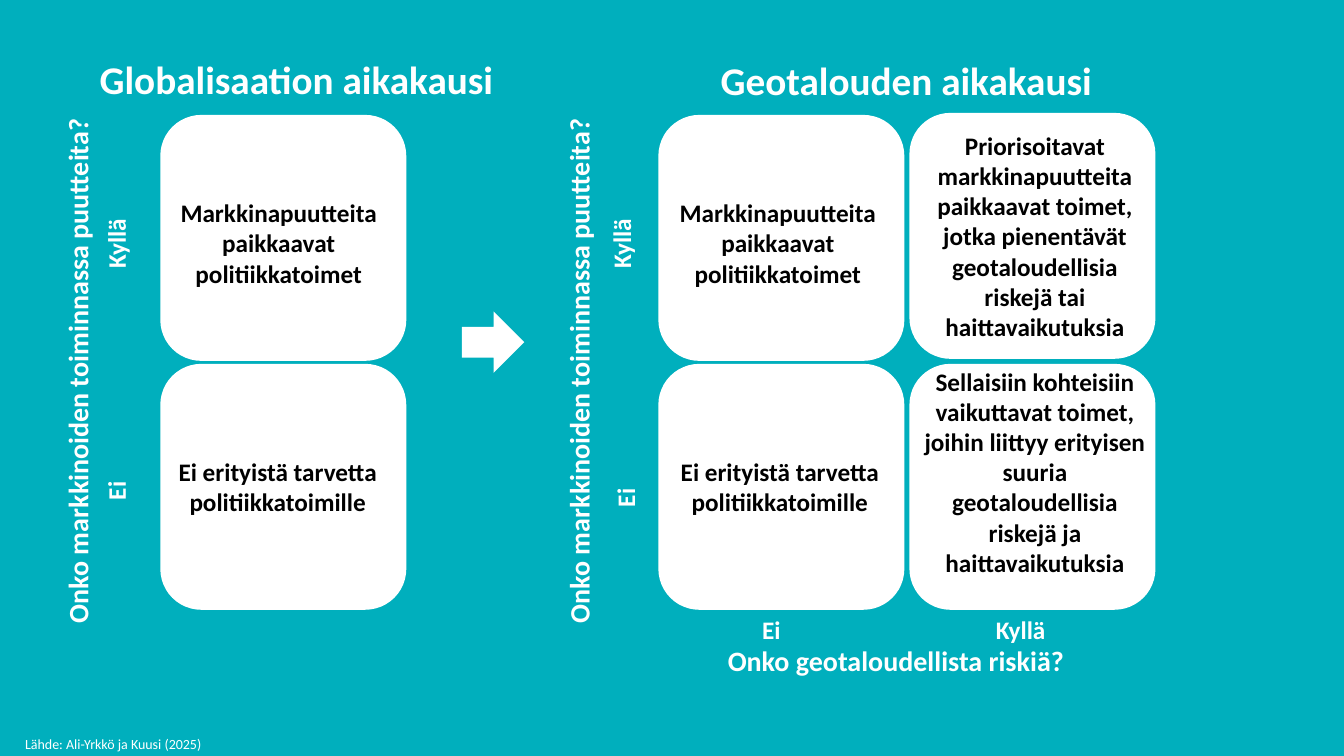
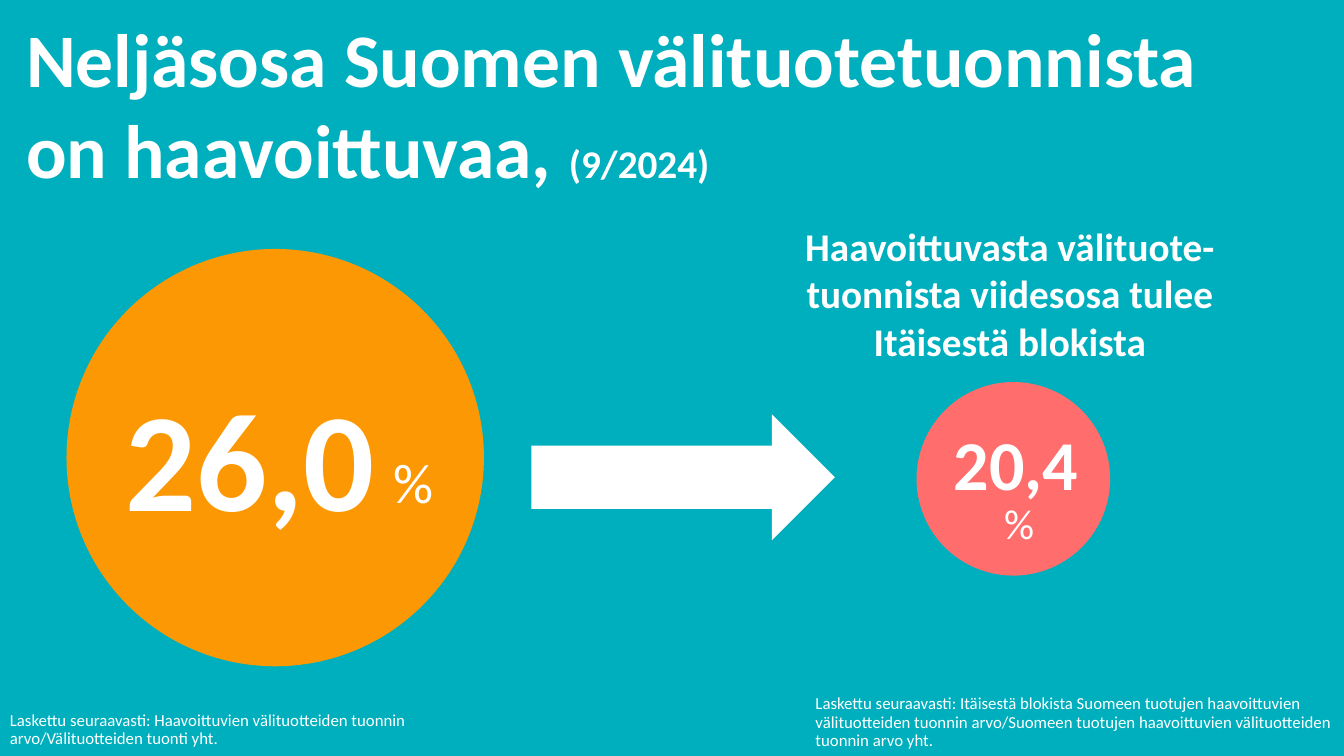
from pptx import Presentation
from pptx.dml.color import RGBColor
from pptx.enum.shapes import MSO_SHAPE
from pptx.enum.text import MSO_AUTO_SIZE, PP_ALIGN
from pptx.util import Pt

PX = 9144
WIDTH, HEIGHT = 1333, 750
FONT = "Calibri"
COLORS = {
    "background": "00AFBD",
    "white": "FFFFFF",
    "black": "000000",
    "orange": "FC9804",
    "coral": "FF6D6D",
}
ROUNDED = MSO_SHAPE.ROUNDED_RECTANGLE
ELLIPSE = MSO_SHAPE.OVAL
ARROW = MSO_SHAPE.RIGHT_ARROW
LEFT, CENTER = PP_ALIGN.LEFT, PP_ALIGN.CENTER
GROW, FIXED = MSO_AUTO_SIZE.SHAPE_TO_FIT_TEXT, MSO_AUTO_SIZE.NONE

CELL = 244
TOP_ROW, BOTTOM_ROW = 114, 361
MARKET_QUESTION = "Onko markkinoiden toiminnassa puutteita?"
MARKET_ACTIONS = "Markkinapuutteita paikkaavat politiikkatoimet"
NO_ACTIONS = "Ei erityistä tarvetta politiikkatoimille"
PRIORITY_ACTIONS = (
    "Priorisoitavat markkinapuutteita paikkaavat toimet, jotka pienentävät "
    "geotaloudellisia riskejä tai haittavaikutuksia"
)
TARGET_ACTIONS = (
    "Sellaisiin kohteisiin vaikuttavat toimet, joihin liittyy erityisen suuria "
    "geotaloudellisia riskejä ja haittavaikutuksia"
)


class Deck:
    def __init__(self):
        self.presentation = Presentation()
        self.presentation.slide_width = WIDTH * PX
        self.presentation.slide_height = HEIGHT * PX
        self.slide = None

    def color(self, name):
        return RGBColor.from_string(COLORS[name])

    def add_slide(self):
        layout = self.presentation.slide_layouts[6]
        self.slide = self.presentation.slides.add_slide(layout)
        fill = self.slide.background.fill
        fill.solid()
        fill.fore_color.rgb = self.color("background")

    def shape(self, kind, left, top, width, height, color="white"):
        shape = self.slide.shapes.add_shape(
            kind, left * PX, top * PX, width * PX, height * PX)
        shape.shadow.inherit = False
        shape.fill.solid()
        shape.fill.fore_color.rgb = self.color(color)
        shape.line.fill.background()

    def style(self, run, size, color, bold):
        run.font.name = FONT
        run.font.size = Pt(size)
        run.font.bold = bold
        run.font.color.rgb = self.color(color)

    def text(self, text, left, top, width, height, size, color="white",
             bold=True, align=LEFT, wrap=True, fit=GROW):
        shape = self.slide.shapes.add_textbox(
            left * PX, top * PX, width * PX, height * PX)
        frame = shape.text_frame
        frame.word_wrap = wrap
        frame.auto_size = fit
        frame.text = text
        paragraph = frame.paragraphs[0]
        paragraph.alignment = align
        self.style(paragraph.runs[0], size, color, bold)
        return shape

    def cell_text(self, text, left, top, width, height):
        self.text(text, left, top, width, height, 18, "black", align=CENTER)

    def label(self, text, left, top, width, height, size=18):
        return self.text(text, left, top, width, height, size, wrap=False)

    def vertical_label(self, text, left, top, height):
        shape = self.label(text, left, top, 50, height)
        shape.text_frame._txBody.bodyPr.set("vert", "vert270")

    def vertical_question(self, left):
        shape = self.text(MARKET_QUESTION, left, 346, 558, 44, 20, align=CENTER)
        shape.rotation = 270

    def figure(self, text, left, top, width, height, size, bold=True):
        shape = self.text(text, left, top, width, height, size,
                          bold=bold, fit=FIXED)
        self.space(shape, 0.9, 10, 6)

    def note(self, text, left, top, width, height):
        shape = self.text(text, left, top, width, height, 12,
                          bold=False, fit=FIXED)
        self.space(shape, 0.9, 0, 12)

    def space(self, shape, line, before=0, after=0):
        paragraph = shape.text_frame.paragraphs[0]
        paragraph.line_spacing = line
        paragraph.space_before = Pt(before)
        paragraph.space_after = Pt(after)


def build_matrix_slide(deck):
    deck.add_slide()
    for left, top_row in ((159, TOP_ROW), (653, TOP_ROW), (902, 112)):
        for top in (top_row, BOTTOM_ROW):
            deck.shape(ROUNDED, left, top, CELL, CELL)

    for left, no_left, no_top, yes_left in ((-202, 95, 477, 95),
                                            (295, 600, 484, 596)):
        deck.vertical_question(left)
        deck.vertical_label("Ei", no_left, no_top, 29)
        deck.vertical_label("Kyllä", yes_left, 216, 60)

    deck.label("Globalisaation aikakausi", 89, 50, 415, 57, 28)
    deck.label("Geotalouden aikakausi", 705, 51, 393, 57, 28)
    deck.shape(ARROW, 458, 309, 62, 61)

    for actions_left, none_left, none_width in ((150, 149, 253),
                                                (645, 649, 249)):
        deck.cell_text(MARKET_ACTIONS, actions_left, 191, 253, 101)
        deck.cell_text(NO_ACTIONS, none_left, 448, none_width, 71)
    deck.cell_text(PRIORITY_ACTIONS, 900, 124, 253, 222)
    deck.cell_text(TARGET_ACTIONS, 901, 358, 251, 222)

    deck.label("Ei", 746, 605, 38, 40)
    deck.label("Kyllä", 978, 605, 70, 40)
    risk_question = deck.label(
        "Onko geotaloudellista riskiä?", 712, 653, 356, 28, 20)
    deck.space(risk_question, Pt(10))
    deck.text("Lähde: Ali-Yrkkö ja Kuusi (2025)", 15, 725, 699, 27, 10, bold=False)


def build_share_slide(deck):
    deck.add_slide()
    title = deck.text("Neljäsosa Suomen välituotetuonnista on haavoittuvaa, ",
                      16, 7, 1223, 192, 54)
    date = title.text_frame.paragraphs[0].add_run()
    date.text = "(9/2024)"
    deck.style(date, 28, "white", True)

    deck.shape(ELLIPSE, 66, 247, 414, 414, "orange")
    deck.figure("%", 380, 447, 66, 72, 40, bold=False)
    deck.figure("26,0", 115, 383, 284, 169, 100)
    deck.note("Laskettu seuraavasti: Haavoittuvien välituotteiden tuonnin "
              "arvo/Välituotteiden tuonti yht.", 0, 701, 426, 36)

    deck.shape(ELLIPSE, 909, 379, 192, 192, "coral")
    deck.figure("%", 986, 494, 30, 33, 30, bold=False)
    deck.figure("20,4", 936, 422, 192, 41, 50)
    deck.text("Haavoittuvasta välituote-tuonnista viidesosa tulee Itäisestä blokista",
              776, 216, 451, 151, 28, align=CENTER)
    deck.note("Laskettu seuraavasti: Itäisestä blokista Suomeen tuotujen "
              "haavoittuvien välituotteiden tuonnin arvo/Suomeen tuotujen "
              "haavoittuvien välituotteiden tuonnin arvo yht.", 799, 685, 534, 54)
    deck.shape(ARROW, 527, 411, 301, 125)


def main():
    deck = Deck()
    build_matrix_slide(deck)
    build_share_slide(deck)
    deck.presentation.save("out.pptx")


if __name__ == "__main__":
    main()
